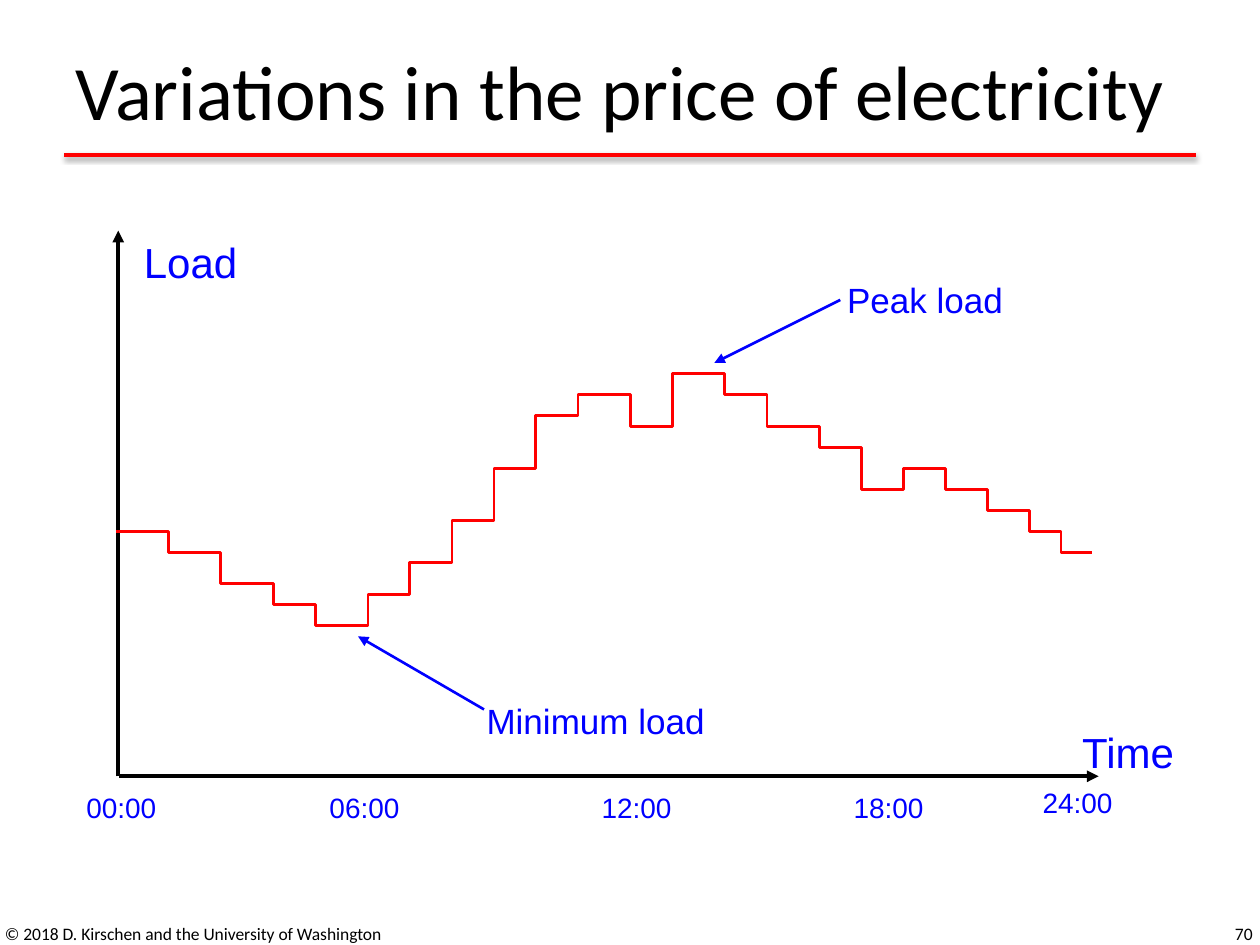
from lxml import etree
from pptx import Presentation
from pptx.dml.color import RGBColor
from pptx.enum.shapes import MSO_CONNECTOR
from pptx.enum.text import MSO_ANCHOR, MSO_AUTO_SIZE, PP_ALIGN
from pptx.oxml.ns import qn
from pptx.util import Pt

LEFT, CENTER, RIGHT = PP_ALIGN.LEFT, PP_ALIGN.CENTER, PP_ALIGN.RIGHT
MIDDLE = MSO_ANCHOR.MIDDLE
NO_FIT = MSO_AUTO_SIZE.NONE
STRAIGHT = MSO_CONNECTOR.STRAIGHT

COLORS = {"text": "000000", "label": "0000FF", "accent": "FF0000", "shadow": "000000"}

UNIT = 6  # points per step of the load grid
# (duration, depth below the peak) of each load level, in grid units
LOAD_STEPS = [
    (5, 15), (5, 17), (5, 20), (4, 22), (5, 24), (4, 21), (4, 18), (4, 14),
    (4, 9), (4, 4), (5, 2), (4, 5), (5, 0), (4, 2), (5, 5), (4, 7),
    (4, 11), (4, 9), (4, 11), (4, 13), (3, 15), (3, 17),
]
# text, left, top, width, height, size; relative to the diagram
LABELS = [
    ("Time", 544.6, 280, 67.7, 36, 24),
    ("Load", 8.9, 0, 67.7, 36, 24),
    ("00:00", -24.2, 316, 54.7, 26.6, 16),
    ("06:00", 114.7, 316, 54.7, 26.6, 16),
    ("12:00", 270.2, 316, 54.7, 26.6, 16),
    ("18:00", 414.2, 316, 54.7, 26.6, 16),
    ("24:00", 522.2, 313.2, 54.7, 26.6, 16),
    ("Minimum load", 204.7, 264.2, 139, 31, 20),
    ("Peak load", 410.6, 23.8, 103.7, 31, 20),
]


def rgb(name):
    return RGBColor.from_string(COLORS[name])


def set_text(sp, text, size, font="Calibri", color="text", align=LEFT, wrap=True):
    tf = sp.text_frame
    tf.word_wrap = wrap
    tf.auto_size = NO_FIT
    tf.vertical_anchor = MIDDLE
    p = tf.paragraphs[0]
    p.alignment = align
    r = p.add_run()
    r.text = text
    r.font.size = Pt(size)
    r.font.name = font
    r.font.color.rgb = rgb(color)


def add_text(slide, text, x, y, w, h, **fmt):
    sp = slide.shapes.add_textbox(Pt(x), Pt(y), Pt(w), Pt(h))
    set_text(sp, text, **fmt)


def add_line(slide, x1, y1, x2, y2, color, width, arrow=False):
    """Draw a straight line and return its empty effect list."""
    line = slide.shapes.add_connector(STRAIGHT, Pt(x1), Pt(y1), Pt(x2), Pt(y2))
    line.line.color.rgb = rgb(color)
    line.line.width = Pt(width)
    if arrow:
        etree.SubElement(line.line._get_or_add_ln(), qn("a:tailEnd"), type="triangle")
    return etree.SubElement(line._element.spPr, qn("a:effectLst"))


def add_shadow(effects):
    shadow = etree.SubElement(effects, qn("a:outerShdw"), blurRad=str(Pt(3.1)),
                              dist=str(Pt(1.6)), dir="5400000", rotWithShape="0")
    color = etree.SubElement(shadow, qn("a:srgbClr"), val=COLORS["shadow"])
    etree.SubElement(color, qn("a:alpha"), val="38000")


def add_header(slide, x, y, w, h):
    add_shadow(add_line(slide, x + 0.7, y + 79.2, x + w - 0.7, y + 79.2, "accent", 2))
    title = slide.shapes.title
    title.left, title.top, title.width, title.height = Pt(x), Pt(y), Pt(w), Pt(h)
    set_text(title, "Variations in the price of electricity", size=44)


def add_footer(slide, x, y, w, h):
    add_text(slide, "© 2018 D. Kirschen and the University of Washington",
             x, y, 279.4, h, size=10)
    add_text(slide, "70", x + w - 167.8, y, 167.8, h, size=10, align=RIGHT)


def add_load_curve(slide, x, y):
    """Draw the stepped curve with its peak level at y."""
    points, time = [], 0
    for duration, depth in LOAD_STEPS:
        points += [(time, depth), (time + duration, depth)]
        time += duration
    builder = slide.shapes.build_freeform(*points[0], scale=Pt(UNIT))
    builder.add_line_segments(points[1:], close=False)
    curve = builder.convert_to_shape(Pt(x), Pt(y))
    curve.shadow.inherit = False
    curve.fill.background()
    curve.line.color.rgb = rgb("accent")
    curve.line.width = Pt(1.5)


def add_load_diagram(slide, x, y, w, h):
    add_line(slide, x + 2, y + h, x + w, y + h, "text", 2.25, arrow=True)
    add_line(slide, x + 1.4, y + h, x + 1.4, y, "text", 2.25, arrow=True)
    add_load_curve(slide, x, y + 81.8)
    for text, dx, dy, lw, lh, size in LABELS:
        add_text(slide, text, x + dx, y + dy, lw, lh, size=size, font="Arial",
                 color="label", align=CENTER, wrap=False)
    for x1, y1, x2, y2 in [(210.4, 273.6, 138.4, 231.8), (414, 39.6, 342, 75.6)]:
        add_line(slide, x + x1, y + y1, x + x2, y + y2, "label", 1.5, arrow=True)


def main():
    prs = Presentation()
    prs.slide_width, prs.slide_height = Pt(720), Pt(540)
    slide = prs.slides.add_slide(prs.slide_layouts[5])
    add_header(slide, 36, 9.4, 648, 84.2)
    add_footer(slide, -4.3, 519.1, 727.2, 28.8)
    add_load_diagram(slide, 66.2, 131.8, 561.6, 311.8)
    prs.save("out.pptx")


if __name__ == "__main__":
    main()
